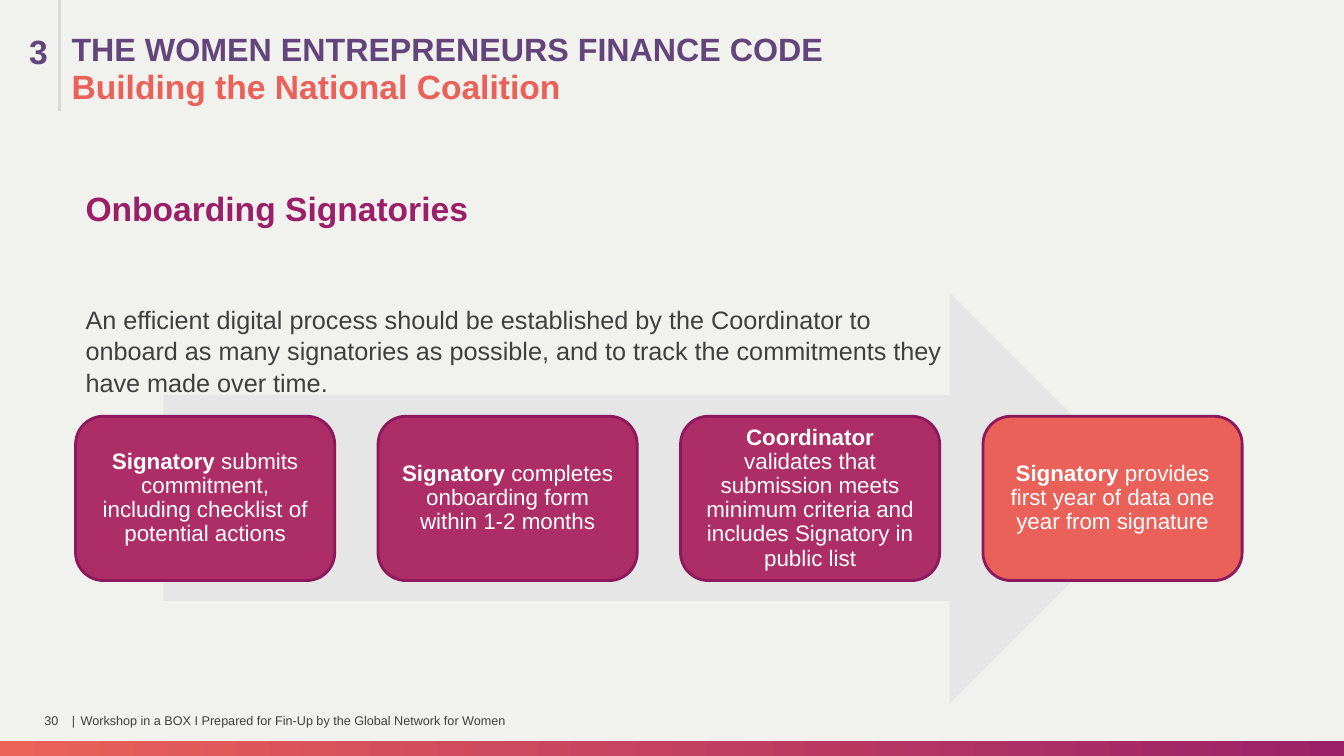
"""Build the slide on onboarding signatories to the finance code."""
import pptx
import pptx.dml.color
import pptx.enum.shapes
import pptx.enum.text
import pptx.util
import lxml.etree

PX = 9144
FONT = "Arial"
COLORS = {
    "background": "F1F1EE", "coral": "EA6159", "berry": "AD2D67", "outline": "8C195D",
    "arrow": "E7E6E6", "heading": "9B1F68", "purple": "64457B", "text": "3F3F3F",
    "rule": "D8D8D8", "white": "FFFFFF", "band_left": "EB6258", "band_right": "9B2068",
}
SHAPES = pptx.enum.shapes.MSO_SHAPE
ALIGN = pptx.enum.text.PP_ALIGN
MIDDLE = pptx.enum.text.MSO_ANCHOR.MIDDLE


def color(name):
    return pptx.dml.color.RGBColor.from_string(COLORS[name])


def style(run, size, color_name, bold=False):
    run.font.name = FONT
    run.font.size = pptx.util.Pt(size)
    run.font.bold = bold
    run.font.color.rgb = color(color_name)


deck = pptx.Presentation()
deck.slide_width = 1333 * PX
deck.slide_height = 750 * PX
slide = deck.slides.add_slide(deck.slide_layouts[6])
slide.background.fill.solid()
slide.background.fill.fore_color.rgb = color("background")

band = slide.shapes.add_shape(SHAPES.RECTANGLE, 0, 735 * PX, 1333 * PX, 15 * PX)
band.shadow.inherit = False
band.line.fill.background()
band.fill.gradient()
band.fill.gradient_angle = 0
for stop, name in zip(band.fill.gradient_stops, ("band_left", "band_right")):
    stop.color.rgb = color(name)

process_arrow = slide.shapes.add_shape(
    SHAPES.RIGHT_ARROW, 162 * PX, 290 * PX, 984 * PX, 408 * PX)
process_arrow.shadow.inherit = False
process_arrow.fill.solid()
process_arrow.fill.fore_color.rgb = color("arrow")
process_arrow.line.fill.background()

steps = [
    ("Signatory", " submits commitment, including checklist of potential actions", "berry"),
    ("Signatory", " completes onboarding form within 1-2 months", "berry"),
    ("Coordinator", " validates that submission meets minimum criteria and includes "
     "Signatory in public list", "berry"),
    ("Signatory", " provides first year of data one year from signature", "coral"),
]
for index, (actor, action, fill) in enumerate(steps):
    step = slide.shapes.add_shape(
        SHAPES.ROUNDED_RECTANGLE, (75 + 300 * index) * PX, 413 * PX, 257 * PX, 163 * PX)
    step.shadow.inherit = False
    step.adjustments[0] = 0.17
    step.fill.solid()
    step.fill.fore_color.rgb = color(fill)
    step.line.color.rgb = color("outline")
    step.line.width = pptx.util.Pt(2)
    frame = step.text_frame
    frame.word_wrap = True
    frame.vertical_anchor = MIDDLE
    frame.margin_left = frame.margin_right = 11 * PX
    frame.margin_top = frame.margin_bottom = 7 * PX
    sentence = frame.paragraphs[0]
    sentence.alignment = ALIGN.CENTER
    sentence.line_spacing = 0.9
    for words, bold in ((actor, True), (action, False)):
        run = sentence.add_run()
        run.text = words
        style(run, 16, "white", bold)

section_rule = slide.shapes.add_connector(
    pptx.enum.shapes.MSO_CONNECTOR.STRAIGHT, 59 * PX, 0, 59 * PX, 110 * PX)
section_rule.line.color.rgb = color("rule")
section_rule.line.width = pptx.util.Pt(2.25)
lxml.etree.SubElement(section_rule.line._get_or_add_ln().getparent(),
                      pptx.oxml.ns.qn("a:effectLst"))

texts = [
    ("Onboarding Signatories", (75, 179, 1187, 48), 10, 24, "heading", True, 1.05),
    ("An efficient digital process should be established by the Coordinator to onboard "
     "as many signatories as possible, and to track the commitments they have made over "
     "time.", (75, 295, 880, 131), 10, 18, "text", False, 1.05),
    ("3", (0, 26, 90, 50), 29, 24, "purple", True, 1.0),
    ("THE WOMEN ENTREPRENEURS FINANCE CODE", (42, 24, 1219, 50), 29, 23, "purple", True, 1.0),
    ("Building the National Coalition", (59, 60, 1113, 50), 12, 24, "coral", True, 1.0),
]
for words, box, inset, size, name, bold, spacing in texts:
    frame = slide.shapes.add_textbox(*(length * PX for length in box)).text_frame
    frame.word_wrap = True
    frame.margin_left = inset * PX
    frame.margin_right = 10 * PX
    frame.margin_top = frame.margin_bottom = 5 * PX
    frame.text = words
    frame.paragraphs[0].line_spacing = spacing
    style(frame.paragraphs[0].runs[0], size, name, bold)

footer = [
    ("30", 44, 22, ALIGN.LEFT),
    ("|", 68, 10, ALIGN.CENTER),
    ("Workshop in a BOX I Prepared for Fin-Up by the Global Network for Women",
     80, 571, ALIGN.LEFT),
]
for words, left, width, alignment in footer:
    frame = slide.shapes.add_textbox(left * PX, 695 * PX, width * PX, 40 * PX).text_frame
    frame.word_wrap = True
    frame.vertical_anchor = MIDDLE
    frame.margin_left = frame.margin_right = frame.margin_top = frame.margin_bottom = 0
    frame.text = words
    frame.paragraphs[0].alignment = alignment
    style(frame.paragraphs[0].runs[0], 9, "text")

deck.save("out.pptx")
